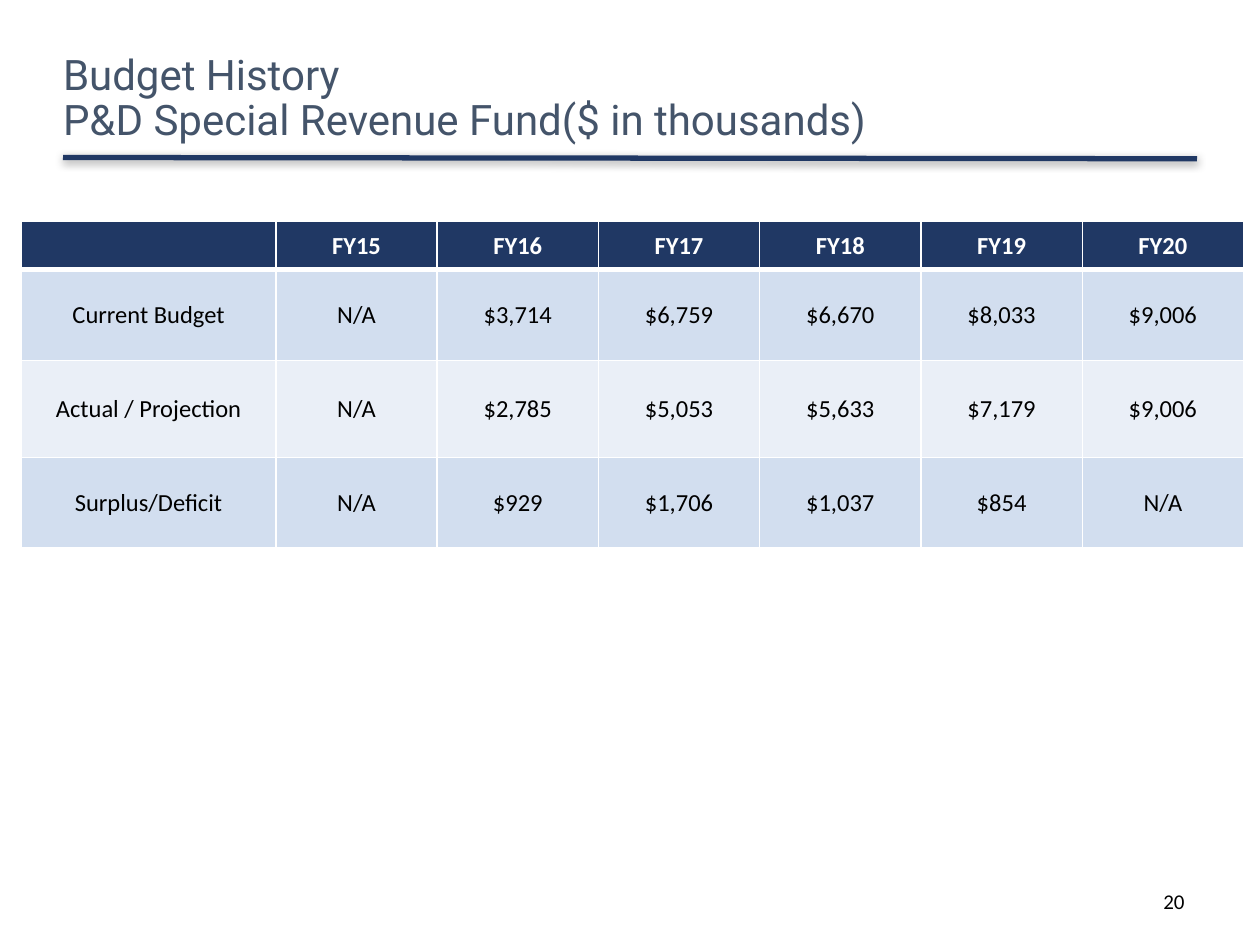
from lxml.etree import SubElement
from pptx import Presentation
from pptx.dml.color import RGBColor
from pptx.enum.shapes import MSO_CONNECTOR
from pptx.enum.text import MSO_ANCHOR, MSO_AUTO_SIZE, PP_ALIGN
from pptx.oxml import parse_xml
from pptx.oxml.ns import nsdecls, qn
from pptx.util import Inches, Pt

NAVY, WHITE, BLACK = "203864", "FFFFFF", "000000"


def color(hex_value):
    return RGBColor.from_string(hex_value)


def set_font(paragraph, name, size, hex_value, bold=False):
    paragraph.font.name = name
    paragraph.font.size = Pt(size)
    paragraph.font.bold = bold
    paragraph.font.color.rgb = color(hex_value)


prs = Presentation()
prs.slide_width, prs.slide_height = Inches(10), Inches(7.5)
slide = prs.slides.add_slide(prs.slide_layouts[5])

# Rule under the title, with a soft shadow
title_rule = slide.shapes.add_connector(
    MSO_CONNECTOR.STRAIGHT, Inches(0.5), Inches(1.25), Inches(9.5), Inches(1.26))
title_rule.line.color.rgb = color(NAVY)
title_rule.line.width = Pt(3)
title_rule._element.spPr.append(parse_xml(
    f'<a:effectLst {nsdecls("a")}>'
    f'<a:outerShdw blurRad="{Pt(5)}" dist="{Pt(1.6)}" dir="5400000" rotWithShape="0">'
    '<a:srgbClr val="000000"><a:alpha val="38000"/></a:srgbClr>'
    '</a:outerShdw></a:effectLst>'))

# Title
title = slide.shapes.title
title.left, title.top = Inches(0.5), Inches(0.33)
title.width, title.height = Inches(6.86), Inches(0.92)
heading = title.text_frame
heading.margin_left = heading.margin_right = heading.margin_top = heading.margin_bottom = 0
heading.vertical_anchor = MSO_ANCHOR.MIDDLE
heading.word_wrap = True
heading.auto_size = MSO_AUTO_SIZE.NONE
heading.text = "Budget History \vP&D Special Revenue Fund($ in thousands)"
heading.paragraphs[0].alignment = PP_ALIGN.LEFT
heading.paragraphs[0].line_spacing = 0.9
set_font(heading.paragraphs[0], "Roboto", 24, "44546A")

# Page number
page_number = slide.shapes.add_textbox(
    Inches(7.17), Inches(6.95), Inches(2.33), Inches(0.4)).text_frame
page_number.word_wrap = True
page_number.vertical_anchor = MSO_ANCHOR.MIDDLE
page_number.text = "20"
page_number.paragraphs[0].alignment = PP_ALIGN.RIGHT
set_font(page_number.paragraphs[0], "Calibri", 12, BLACK)

# Budget table
budget_rows = [
    ["", "FY15", "FY16", "FY17", "FY18", "FY19", "FY20"],
    ["Current Budget", "N/A", "$3,714", "$6,759", "$6,670", "$8,033", "$9,006"],
    ["Actual / Projection", "N/A", "$2,785", "$5,053", "$5,633", "$7,179", "$9,006"],
    ["Surplus/Deficit", "N/A", "$929", "$1,706", "$1,037", "$854", "N/A"],
]
row_heights = [0.38, 0.72, 0.77, 0.72]
row_fills = [NAVY, "D2DEEF", "EAEFF7", "D2DEEF"]
budget = slide.shapes.add_table(
    len(budget_rows), len(budget_rows[0]),
    Inches(0.17), Inches(1.76), Inches(9.67), Inches(2.58)).table
for index, column in enumerate(budget.columns):
    column.width = Inches(1.28 if index else 2.02)

for r, values in enumerate(budget_rows):
    budget.rows[r].height = Inches(row_heights[r])
    is_header = r == 0
    for c, value in enumerate(values):
        cell = budget.cell(r, c)
        cell.text = value
        cell.vertical_anchor = MSO_ANCHOR.MIDDLE
        label = cell.text_frame.paragraphs[0]
        label.alignment = PP_ALIGN.CENTER
        set_font(label, "Calibri", 14, WHITE if is_header else BLACK, is_header)

        # White borders, thicker between the header and the first row
        for side in ("L", "R", "T", "B"):
            thick = (r, side) in ((0, "B"), (1, "T"))
            border = SubElement(cell._tc.get_or_add_tcPr(), qn(f"a:ln{side}"),
                                w=str(Pt(3 if thick else 1)))
            border_fill = SubElement(border, qn("a:solidFill"))
            SubElement(border_fill, qn("a:srgbClr"), val=WHITE)
        cell.fill.solid()
        cell.fill.fore_color.rgb = color(row_fills[r])

prs.save("out.pptx")
